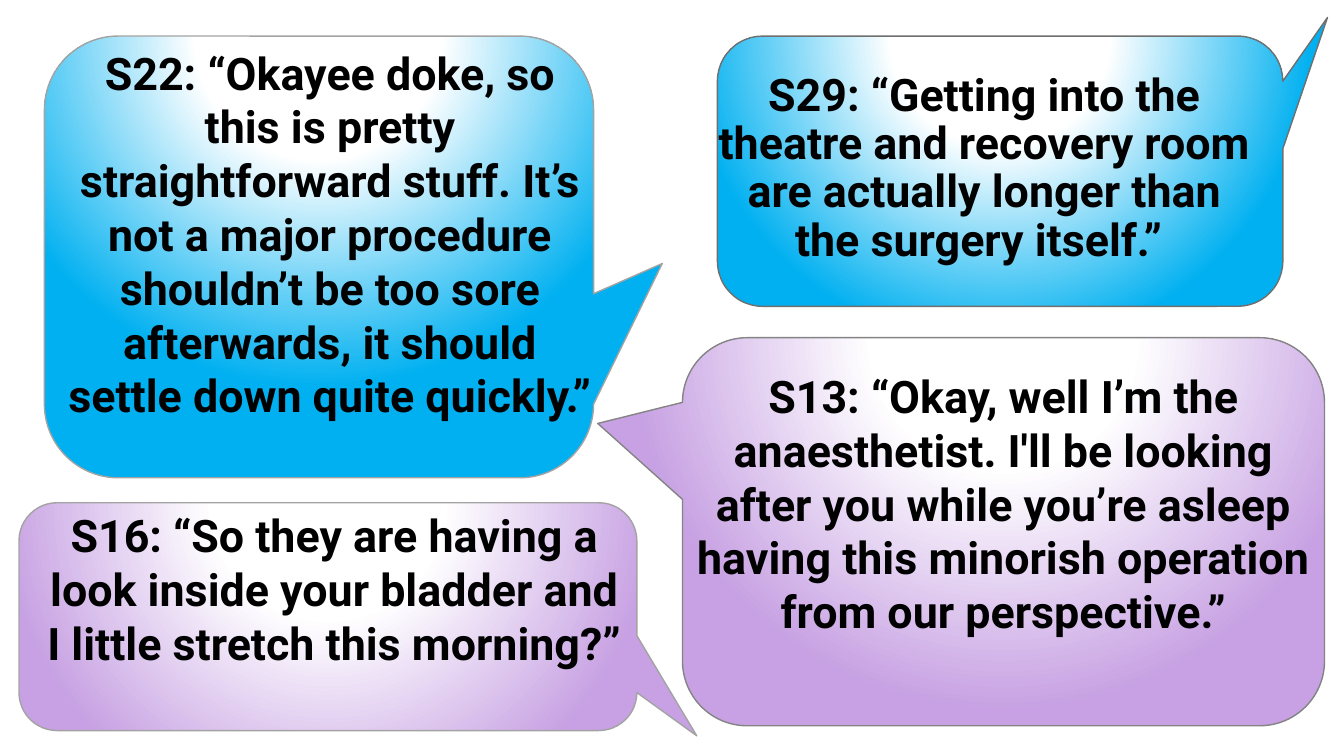
from pptx import Presentation
from pptx.dml.color import RGBColor
from pptx.enum.shapes import MSO_SHAPE
from pptx.enum.text import MSO_ANCHOR, PP_ALIGN
from pptx.oxml import parse_xml
from pptx.oxml.ns import nsdecls
from pptx.util import Cm, Pt

BUBBLE = MSO_SHAPE.ROUNDED_RECTANGULAR_CALLOUT
TOP = MSO_ANCHOR.TOP
CENTER = PP_ALIGN.CENTER

COLORS = {
    "white": "FFFFFF", "black": "000000", "lilac": "C7A1E3", "sky": "00B0F0",
    "dark": "6F6F6F", "mid": "848484", "light": "A3A3A3",
}
CORNER = 0.167

QUOTES = [
    {
        "words": "S13: “Okay, well I’m the anaesthetist. I'll be looking after you while "
                 "you’re asleep having this minorish operation from our perspective.”",
        "bubble": (17.2, 8.51, 16.18, 9.78), "tail": (-0.632, -0.279),
        "tint": "lilac", "outline": "mid",
        "area": (17.2, 9.17, 16.18, 8.46), "spacing": {},
    },
    {
        "words": "S16: “So they are having a look inside your bladder and I little "
                 "stretch this morning?” ",
        "bubble": (0.48, 12.67, 15.57, 5.74), "tail": (0.597, 0.523),
        "tint": "lilac", "outline": "light",
        "area": (0.81, 12.67, 15.24, 5.74), "spacing": {},
    },
    {
        "words": "S29: “Getting into the theatre and recovery room are actually longer "
                 "than the surgery itself.” ",
        "bubble": (18.08, 0.91, 14.25, 6.81), "tail": (0.579, -0.569),
        "tint": "sky", "outline": "dark",
        "area": (17.81, 1.7, 14, 6.02), "spacing": {"line": 0.9, "before": 10},
    },
    {
        "words": "S22: “Okayee doke, so this is pretty straightforward stuff. It’s not a "
                 "major procedure shouldn’t be too sore afterwards, it should settle "
                 "down quite quickly.”",
        "bubble": (1.12, 0.91, 13.84, 11.13), "tail": (0.625, 0.015),
        "tint": "sky", "outline": "light",
        "area": (1.4, 1.02, 13.84, 11.2), "spacing": {},
    },
]


def glow(tint):
    stops = "".join(
        f'<a:gs pos="{percent * 1000}"><a:srgbClr val="{COLORS[color]}"/></a:gs>'
        for percent, color in ((0, "white"), (35, "white"), (100, tint))
    )
    return parse_xml(
        f'<a:gradFill {nsdecls("a")} rotWithShape="1"><a:gsLst>{stops}</a:gsLst>'
        '<a:path path="circle"><a:fillToRect l="50000" t="-80000" r="50000" b="180000"/>'
        "</a:path></a:gradFill>"
    )


def add_bubble(slide, place, tail, tint, outline):
    bubble = slide.shapes.add_shape(BUBBLE, *map(Cm, place))
    bubble.shadow.inherit = False
    for index, value in enumerate((*tail, CORNER)):
        bubble.adjustments[index] = value
    bubble.line.color.rgb = RGBColor.from_string(COLORS[outline])
    bubble.line.width = Pt(1)
    bubble.fill.background()
    properties = bubble.element.spPr
    properties.replace(properties.find("{*}noFill"), glow(tint))


def add_text(slide, words, place, size=32, font="Roboto", color="black", bold=True,
             line=None, before=None):
    frame = slide.shapes.add_textbox(*map(Cm, place)).text_frame
    frame.word_wrap = True
    frame.vertical_anchor = TOP
    paragraph = frame.paragraphs[0]
    paragraph.alignment = CENTER
    if line:
        paragraph.line_spacing = line
    if before:
        paragraph.space_before = Pt(before)
    run = paragraph.add_run()
    run.text = words
    run.font.size = Pt(size)
    run.font.name = font
    run.font.bold = bold
    run.font.color.rgb = RGBColor.from_string(COLORS[color])


def main():
    deck = Presentation()
    deck.slide_width, deck.slide_height = Cm(33.87), Cm(19.05)
    slide = deck.slides.add_slide(deck.slide_layouts[6])
    for quote in QUOTES:
        add_bubble(slide, quote["bubble"], quote["tail"], quote["tint"], quote["outline"])
        add_text(slide, quote["words"], quote["area"], **quote["spacing"])
    deck.save("out.pptx")


if __name__ == "__main__":
    main()
